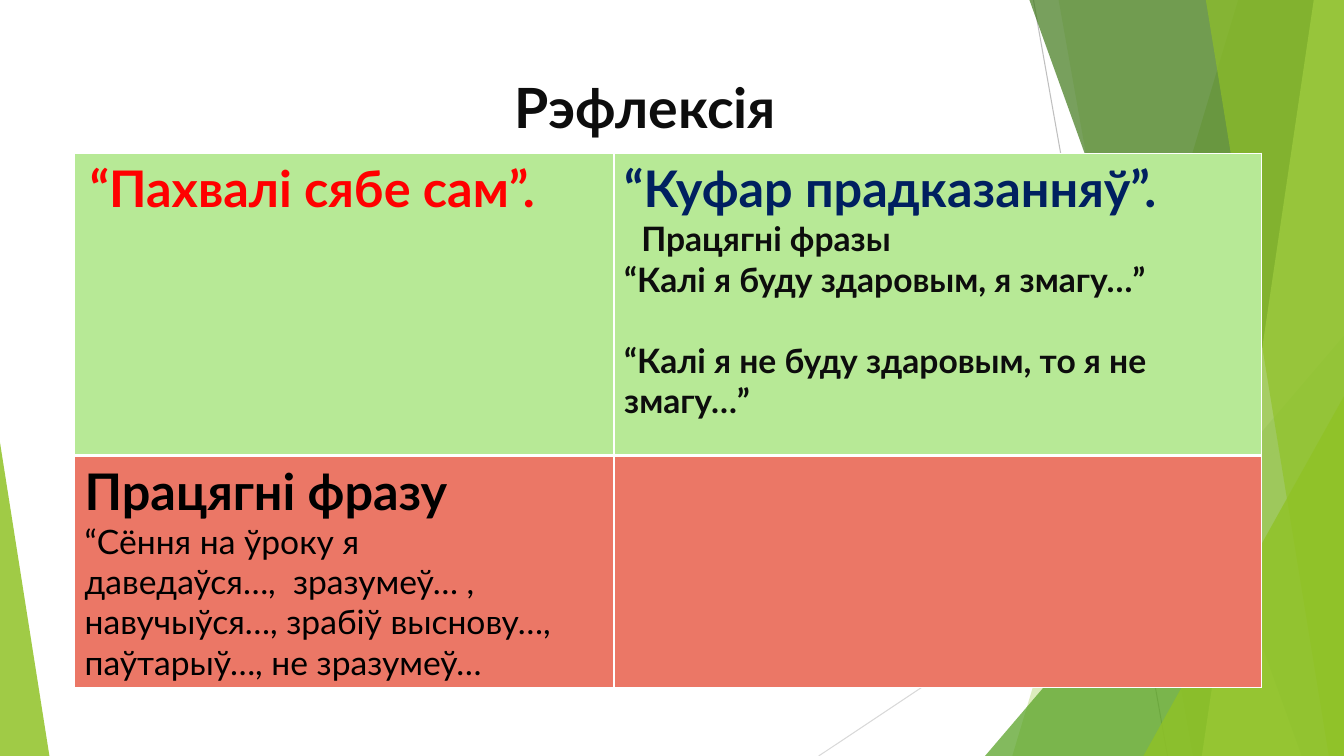
from lxml.etree import SubElement
from pptx import Presentation
from pptx.dml.color import RGBColor
from pptx.enum.shapes import MSO_CONNECTOR, MSO_SHAPE
from pptx.enum.text import MSO_ANCHOR, MSO_AUTO_SIZE, PP_ALIGN
from pptx.oxml.ns import qn
from pptx.util import Inches, Pt

FONT = "Lato"
WHITE = RGBColor(0xFF, 0xFF, 0xFF)
BLACK = RGBColor(0x00, 0x00, 0x00)
INK = RGBColor(0x0D, 0x0D, 0x0D)
RED = RGBColor(0xFF, 0x00, 0x00)
NAVY = RGBColor(0x00, 0x20, 0x60)
MINT = RGBColor(0xB7, 0xE9, 0x96)
CORAL = RGBColor(0xEB, 0x77, 0x66)
LIME = RGBColor(0x90, 0xC2, 0x26)
GREEN = RGBColor(0x54, 0xA0, 0x21)
FOREST = RGBColor(0x3F, 0x78, 0x19)
PALE_LIME = RGBColor(0xC0, 0xE4, 0x74)
GREY = RGBColor(0xBF, 0xBF, 0xBF)
LIGHT_GREY = RGBColor(0xD9, 0xD9, 0xD9)


def write(paragraph, text, size=24, color=INK, bold=True, indent=0, before=0):
    run = paragraph.add_run()
    run.text = text
    run.font.name = FONT
    run.font.size = Pt(size)
    run.font.bold = bold
    run.font.color.rgb = color
    paragraph.alignment = PP_ALIGN.LEFT
    paragraph.space_before = Pt(before)
    if indent:
        paragraph._p.get_or_add_pPr().set("indent", str(Inches(indent)))


def paint(shape, color, opacity):
    shape.shadow.inherit = False
    shape.fill.solid()
    shape.fill.fore_color.rgb = color
    shape.line.fill.background()
    tint = shape._element.spPr.find(qn("a:solidFill"))[0]
    SubElement(tint, qn("a:alpha"), val=str(opacity * 1000))


def add_ray(slide, start, end, color):
    ray = slide.shapes.add_connector(
        MSO_CONNECTOR.STRAIGHT, *(Inches(value) for value in start + end))
    ray.line.color.rgb = color
    ray.line.width = Pt(0.75)
    SubElement(ray._element.spPr, qn("a:effectLst"))


def add_facet(slide, top_left, bottom_left, right, top, bottom, color, opacity):
    corners = [(Inches(x), Inches(y)) for x, y in
               [(right, top), (right, bottom), (bottom_left, bottom)]]
    outline = slide.shapes.build_freeform(Inches(top_left), Inches(top), scale=1.0)
    outline.add_line_segments(corners, close=True)
    paint(outline.convert_to_shape(), color, opacity)


def add_wedge(slide, left, top, width, height, peak, color, opacity):
    wedge = slide.shapes.add_shape(
        MSO_SHAPE.ISOSCELES_TRIANGLE,
        Inches(left), Inches(top), Inches(width), Inches(height))
    wedge.adjustments[0] = peak
    paint(wedge, color, opacity)


def add_backdrop(slide, left, top, width, height):
    right, bottom = left + width, top + height

    def facet(top_inset, bottom_inset, color, opacity):
        add_facet(slide, right - top_inset, right - bottom_inset,
                  right, top, bottom, color, opacity)

    def right_wedge(wedge_width, wedge_height, color, opacity):
        add_wedge(slide, right - wedge_width, bottom - wedge_height,
                  wedge_width, wedge_height, 1, color, opacity)

    add_ray(slide, (right - 3.08, top), (right - 1.75, bottom), GREY)
    add_ray(slide, (right, top + 4.03), (right - 5.21, bottom), LIGHT_GREY)
    facet(1.05, 3.29, LIME, 30)
    facet(2.83, 1.5, LIME, 20)
    right_wedge(3.56, 4.17, GREEN, 72)
    facet(3.12, 0.42, FOREST, 70)
    facet(0.3, 1.41, PALE_LIME, 70)
    facet(1.37, 0.15, LIME, 65)
    right_wedge(1.99, 3.57, LIME, 80)
    add_wedge(slide, left, bottom - 3.11, 0.49, 3.11, 0, LIME, 85)


def add_title(slide, left, top, width, height):
    title = slide.shapes.title
    title.left, title.top = Inches(left), Inches(top)
    title.width, title.height = Inches(width), Inches(height)
    frame = title.text_frame
    frame.auto_size = MSO_AUTO_SIZE.NONE
    frame.vertical_anchor = MSO_ANCHOR.TOP
    write(frame.paragraphs[0], "Рэфлексія", size=39.6)
    slide.shapes._spTree.append(title._element)


def set_borders(cell, **widths):
    properties = cell._tc.get_or_add_tcPr()
    for side in "LRTB":
        border = SubElement(properties, qn(f"a:ln{side}"),
                            w=str(Pt(widths.get(side, 1))))
        fill = SubElement(border, qn("a:solidFill"))
        SubElement(fill, qn("a:srgbClr"), val=str(WHITE))


def fill_cell(cell, color, phrases):
    cell.fill.solid()
    cell.fill.fore_color.rgb = color
    frame = cell.text_frame
    for index, (text, style) in enumerate(phrases):
        paragraph = frame.add_paragraph() if index else frame.paragraphs[0]
        write(paragraph, text, **style)


def add_reflection_table(slide, left, top, width, height):
    praise = [("“Пахвалі сябе сам”.", dict(size=36, color=RED, indent=0.05))]
    predictions = [
        ("“Куфар прадказанняў”.", dict(size=36, color=NAVY)),
        ("Працягні фразы", dict(indent=0.17)),
        ("“Калі я буду здаровым, я змагу…”", {}),
        ("“Калі я не буду здаровым, то я не змагу…”", dict(before=29)),
    ]
    lesson = [
        ("Працягні фразу", dict(size=36, color=BLACK)),
        ("“Сёння на ўроку я", dict(color=BLACK, bold=False)),
        ("даведаўся…,  зразумеў… , навучыўся…, зрабіў выснову…, "
         "паўтарыў…, не зразумеў…", dict(color=BLACK, bold=False)),
    ]
    rows = [(MINT, dict(B=3), [praise, predictions]),
            (CORAL, dict(T=3), [lesson, []])]

    table = slide.shapes.add_table(
        2, 2, Inches(left), Inches(top), Inches(width), Inches(height)).table
    table.columns[0].width = Inches(5.35)
    table.columns[1].width = Inches(width - 5.35)
    table.rows[0].height = Inches(3)
    table.rows[1].height = Inches(height - 3)
    for row, (color, borders, contents) in enumerate(rows):
        for column, phrases in enumerate(contents):
            cell = table.cell(row, column)
            set_borders(cell, **borders)
            fill_cell(cell, color, phrases)


def main():
    deck = Presentation()
    deck.slide_width, deck.slide_height = Inches(13.33), Inches(7.5)
    slide = deck.slides.add_slide(deck.slide_layouts[5])
    add_backdrop(slide, 0, 0, 13.33, 7.5)
    add_title(slide, 5, 0.67, 7.91, 0.71)
    add_reflection_table(slide, 0.74, 1.52, 11.77, 5.3)
    deck.save("out.pptx")


if __name__ == "__main__":
    main()
